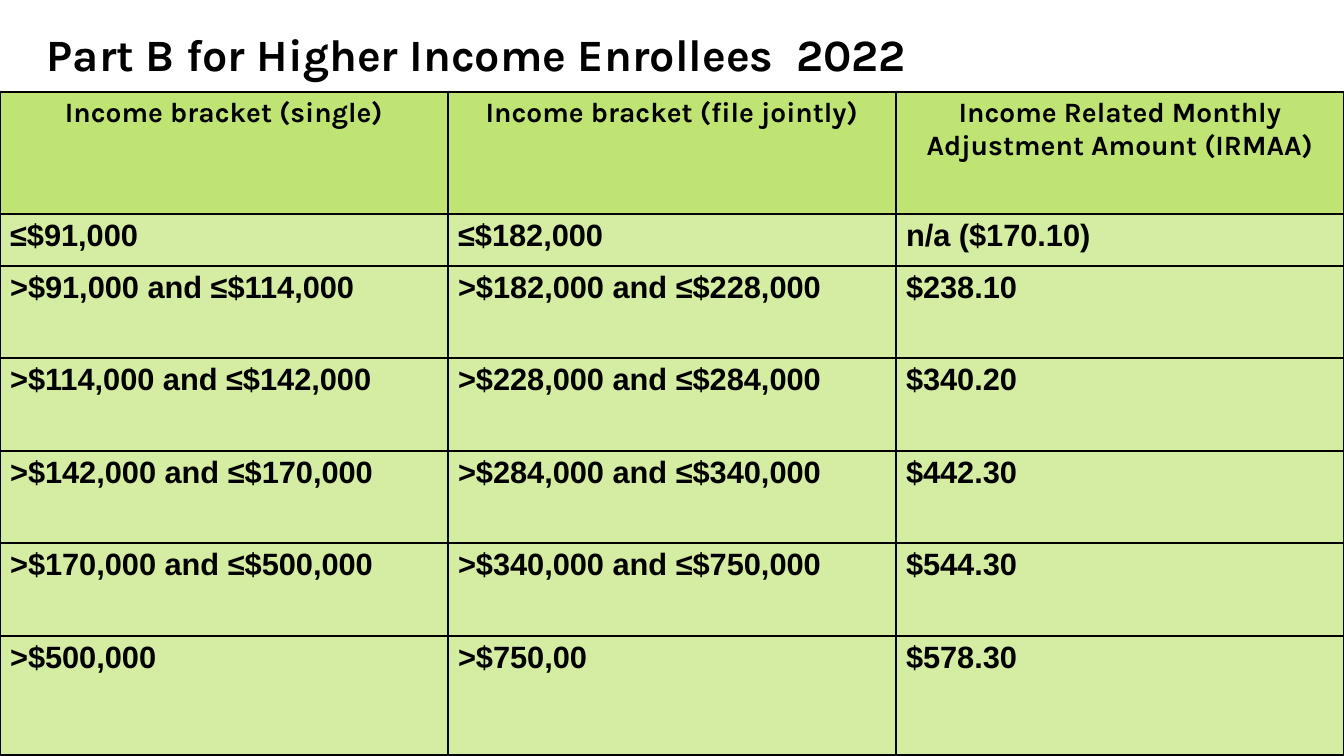
from lxml import etree
from pptx import Presentation
from pptx.dml.color import RGBColor
from pptx.enum.text import MSO_ANCHOR, PP_ALIGN
from pptx.oxml.ns import qn
from pptx.util import Pt

CENTER, LEFT = PP_ALIGN.CENTER, PP_ALIGN.LEFT
MIDDLE = MSO_ANCHOR.MIDDLE

TITLE = "Part B for Higher Income Enrollees  2022"
HEADER = ("Income bracket (single)", "Income bracket (file jointly)",
          "Income Related Monthly Adjustment Amount (IRMAA)")
BRACKETS = [
    ("≤$91,000", "≤$182,000", "n/a ($170.10)"),
    (">$91,000 and ≤$114,000", ">$182,000 and ≤$228,000", "$238.10"),
    (">$114,000 and ≤$142,000", ">$228,000 and ≤$284,000", "$340.20"),
    (">$142,000 and ≤$170,000", ">$284,000 and ≤$340,000", "$442.30"),
    (">$170,000 and ≤$500,000", ">$340,000 and ≤$750,000", "$544.30"),
    (">$500,000", ">$750,00", "$578.30"),
]
COLORS = {"ink": "000000", "header": "C0E474", "body": "D5EDA2"}
TITLE_FONT = {"name": "Karla", "size": Pt(32), "bold": True}
HEADER_FONT = {"name": "Karla", "size": Pt(20), "bold": True}
BODY_FONT = {"name": "Arial", "size": Pt(22), "bold": True}

EMU_PER_PX = 914400 / 100.8
SLIDE_WIDTH, SLIDE_HEIGHT = 1344, 756
TITLE_BOX = (0, 15, 954, 78)
TABLE_TOP = 92
ROW_HEIGHTS = (122, 52, 92, 93, 92, 93, 119)
OUTER_LINE, INNER_LINE = Pt(2.25), Pt(1)


def px(length):
    return round(length * EMU_PER_PX)


def write(frame, text, font_values, alignment):
    paragraph = frame.paragraphs[0]
    paragraph.alignment = alignment
    run = paragraph.add_run()
    run.text = text
    for name, value in font_values.items():
        setattr(run.font, name, value)
    run.font.color.rgb = RGBColor.from_string(COLORS["ink"])


def set_borders(cell, widths):
    """Draw the cell's edges; widths maps L, R, T and B to line widths."""
    properties = cell._tc.get_or_add_tcPr()
    for index, (side, width) in enumerate(widths.items()):
        line = etree.Element(qn(f"a:ln{side}"), w=str(width))
        fill = etree.SubElement(line, qn("a:solidFill"))
        etree.SubElement(fill, qn("a:srgbClr"), val=COLORS["ink"])
        properties.insert(index, line)


def add_title(slide):
    box = slide.shapes.add_textbox(*map(px, TITLE_BOX))
    box.text_frame.word_wrap = True
    box.text_frame.vertical_anchor = MIDDLE
    write(box.text_frame, TITLE, TITLE_FONT, CENTER)


def add_income_table(slide):
    rows = [HEADER, *BRACKETS]
    last_row, last_column = len(rows) - 1, len(HEADER) - 1
    table = slide.shapes.add_table(
        len(rows), len(HEADER), 0, px(TABLE_TOP),
        px(SLIDE_WIDTH), px(sum(ROW_HEIGHTS))).table
    for column in table.columns:
        column.width = px(SLIDE_WIDTH / len(HEADER))
    for row, height in zip(table.rows, ROW_HEIGHTS):
        row.height = px(height)

    for r, texts in enumerate(rows):
        is_header = r == 0
        for c, text in enumerate(texts):
            cell = table.cell(r, c)
            cell.fill.solid()
            fill_name = "header" if is_header else "body"
            cell.fill.fore_color.rgb = RGBColor.from_string(COLORS[fill_name])
            write(cell.text_frame, text,
                  HEADER_FONT if is_header else BODY_FONT,
                  CENTER if is_header else LEFT)
            on_edge = {"L": c == 0, "R": c == last_column,
                       "T": is_header, "B": r == last_row}
            set_borders(cell, {side: OUTER_LINE if outer else INNER_LINE
                               for side, outer in on_edge.items()})


def main():
    presentation = Presentation()
    presentation.slide_width = px(SLIDE_WIDTH)
    presentation.slide_height = px(SLIDE_HEIGHT)
    slide = presentation.slides.add_slide(presentation.slide_layouts[6])
    add_title(slide)
    add_income_table(slide)
    presentation.save("out.pptx")


if __name__ == "__main__":
    main()
